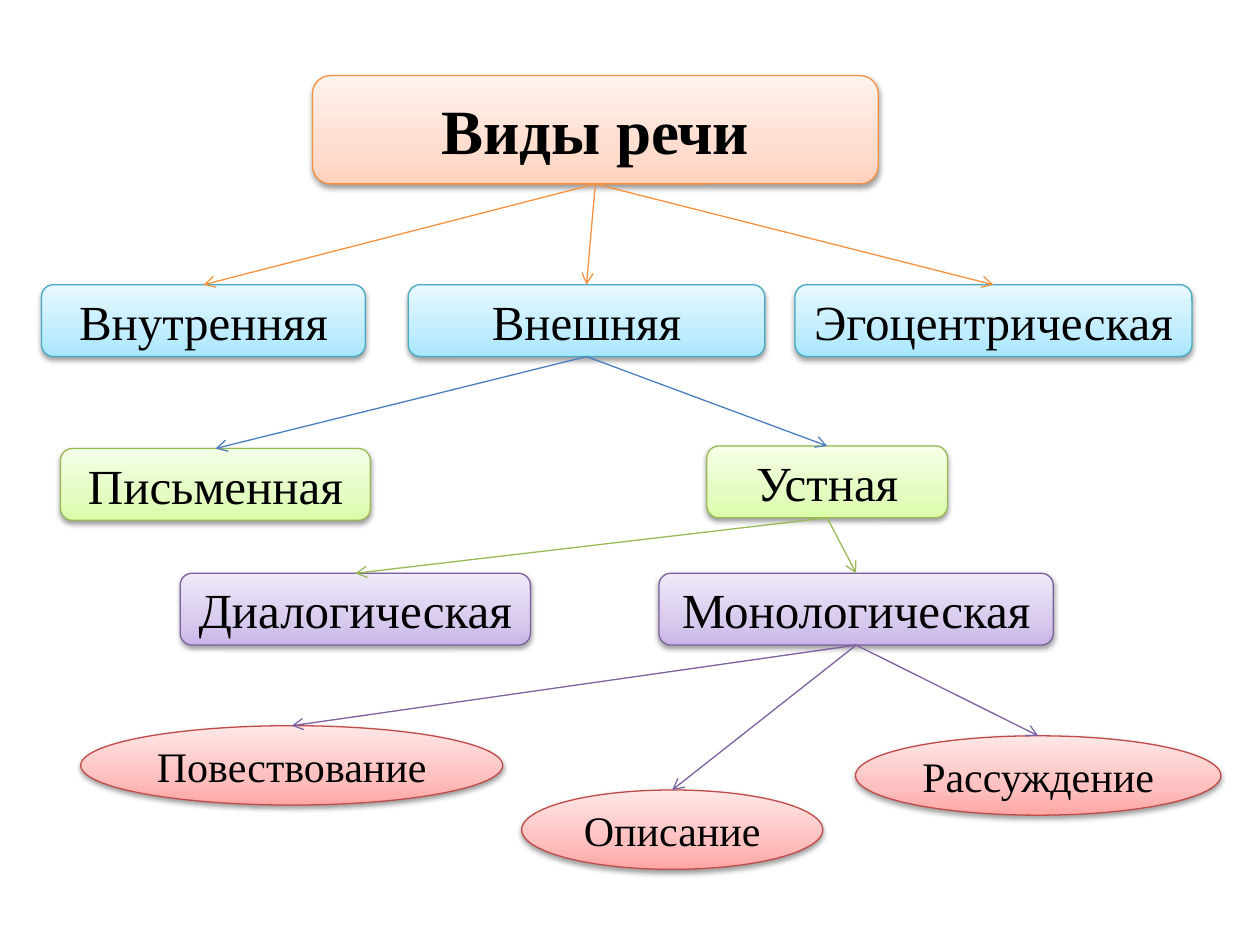
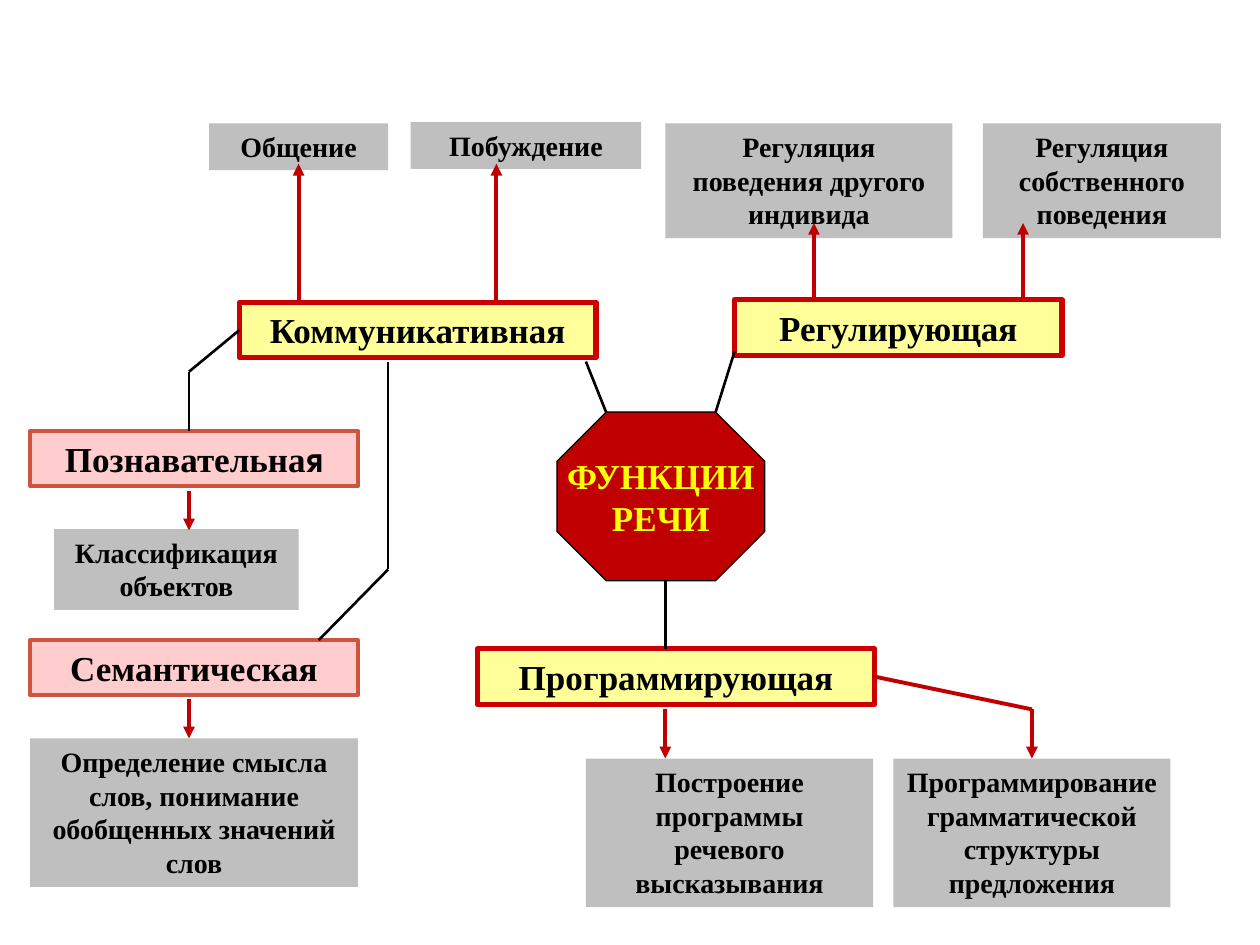
import copy

import pptx
import pptx.dml.color
import pptx.enum.shapes
import pptx.enum.text
import pptx.oxml
import pptx.oxml.ns
import pptx.util
from lxml import etree

Inches = pptx.util.Inches
Pt = pptx.util.Pt
qn = pptx.oxml.ns.qn
RGBColor = pptx.dml.color.RGBColor
Shape = pptx.enum.shapes.MSO_SHAPE
Anchor = pptx.enum.text.MSO_ANCHOR
AutoSize = pptx.enum.text.MSO_AUTO_SIZE

# Colours
BLACK = RGBColor(0x00, 0x00, 0x00)
YELLOW = RGBColor(0xFF, 0xFF, 0x00)
PALE_YELLOW = RGBColor(0xFF, 0xFF, 0x99)
PINK = RGBColor(0xFF, 0xCD, 0xCD)
GREY = RGBColor(0xBF, 0xBF, 0xBF)
DARK_RED = RGBColor(0xC0, 0x00, 0x00)
RED = RGBColor(0xCC, 0x00, 0x00)
BRICK = RGBColor(0xCF, 0x54, 0x3F)
ORANGE_LINE = RGBColor(0xF6, 0x92, 0x40)
AQUA_LINE = RGBColor(0x46, 0xAA, 0xC5)
BLUE_LINE = RGBColor(0x4B, 0x7E, 0xBC)
GREEN_LINE = RGBColor(0x98, 0xB9, 0x55)
PURPLE_LINE = RGBColor(0x7D, 0x60, 0xA0)
ROSE_LINE = RGBColor(0xBF, 0x4C, 0x48)

# Gradients, from the bottom up
ORANGE = (RGBColor(0xFF, 0xD2, 0xBD), RGBColor(0xFF, 0xDE, 0xD0), RGBColor(0xFF, 0xF2, 0xED))
AQUA = (RGBColor(0xA7, 0xE6, 0xFF), RGBColor(0xC1, 0xED, 0xFF), RGBColor(0xE7, 0xF8, 0xFF))
GREEN = (RGBColor(0xDA, 0xFD, 0xA7), RGBColor(0xE4, 0xFC, 0xC2), RGBColor(0xF5, 0xFF, 0xE7))
PURPLE = (RGBColor(0xC9, 0xB5, 0xE8), RGBColor(0xD8, 0xCB, 0xEE), RGBColor(0xF0, 0xEA, 0xF9))
ROSE = (RGBColor(0xFF, 0xA6, 0xA5), RGBColor(0xFF, 0xC0, 0xBF), RGBColor(0xFF, 0xE7, 0xE7))
STOP_POSITIONS = (0, 0.35, 1)

# Kinds of node in the tree of speech types
ROOT = {"fill": ORANGE, "line": ORANGE_LINE, "font": {"size": Pt(36), "bold": True}}
FORM = {"fill": AQUA, "line": AQUA_LINE, "font": {"size": Pt(28)}}
CHANNEL = {"fill": GREEN, "line": GREEN_LINE, "font": {"size": Pt(28)}}
MANNER = {"fill": PURPLE, "line": PURPLE_LINE, "font": {"size": Pt(28)}}
GENRE = {"fill": ROSE, "line": ROSE_LINE, "font": {"size": Pt(24)}, "outline": Shape.OVAL}

# Kinds of box in the map of speech functions
FUNCTION_FONT = {"size": Pt(20), "bold": True}
MAIN = {"fill": PALE_YELLOW, "line": RED, "width": 3, "font": FUNCTION_FONT}
SECONDARY = {"fill": PINK, "line": BRICK, "width": 2.25, "font": FUNCTION_FONT}
DETAIL = {"fill": GREY, "line": None, "font": {"size": Pt(16), "bold": True}}
CENTRE = {"fill": DARK_RED, "line": BLACK, "outline": Shape.OCTAGON,
          "font": {**FUNCTION_FONT, "color": YELLOW}}

BOTTOM, TOP, LEFT, RIGHT = 2, 0, 1, 3


class Diagram:
    """Holds the style and the current slide."""

    font = "Times New Roman"
    accent_font = "TeX Gyre Adventor"

    def __init__(self):
        self.deck = pptx.Presentation()
        self.deck.slide_width = Inches(10)
        self.deck.slide_height = Inches(7.5)
        self.slide = None

    def new_slide(self):
        self.slide = self.deck.slides.add_slide(self.deck.slide_layouts[6])

    def label(self, frame, text, font, frame_format):
        """Centred text; a tuple of strings inside a line switches to the accent font."""
        for name, value in frame_format.items():
            setattr(frame, name, value)
        lines = text if isinstance(text, list) else [text]
        for number, line in enumerate(lines):
            paragraph = frame.add_paragraph() if number else frame.paragraphs[0]
            paragraph.alignment = pptx.enum.text.PP_ALIGN.CENTER
            parts = line if isinstance(line, tuple) else (line,)
            for part, face in zip(parts, (self.font, self.accent_font)):
                run = paragraph.add_run()
                run.text = part
                values = {"name": face, **font}
                run.font.color.rgb = values.pop("color", BLACK)
                for name, value in values.items():
                    setattr(run.font, name, value)

    def shape(self, outline, place, kind):
        shape = self.slide.shapes.add_shape(outline, *map(Inches, place))
        shape.shadow.inherit = False
        if kind["line"] is None:
            shape.line.fill.background()
        else:
            shape.line.color.rgb = kind["line"]
            shape.line.width = Pt(kind.get("width", 0.75))
        return shape

    def node(self, text, place, kind):
        """Tree node with a three-stop gradient and a soft shadow."""
        node = self.shape(kind.get("outline", Shape.ROUNDED_RECTANGLE), place, kind)
        node.fill.gradient()
        node.fill.gradient_angle = 90
        properties = node._element.spPr
        stops = properties.find(qn("a:gradFill")).find(qn("a:gsLst"))
        stops.insert(1, copy.deepcopy(stops[0]))
        for stop, position, color in zip(node.fill.gradient_stops, STOP_POSITIONS, kind["fill"]):
            stop.position = position
            stop.color.rgb = color
        shadow = etree.SubElement(
            properties.find(qn("a:effectLst")), qn("a:outerShdw"), blurRad=str(Pt(3.1)),
            dist=str(Pt(1.6)), dir="5400000", rotWithShape="0")
        shade = etree.SubElement(shadow, qn("a:srgbClr"), val="000000")
        etree.SubElement(shade, qn("a:alpha"), val="38000")
        self.label(node.text_frame, text, kind["font"],
                   {"word_wrap": True, "vertical_anchor": Anchor.MIDDLE})
        return node

    def box(self, text, place, kind):
        """Flat box that grows with its text."""
        box = self.shape(Shape.RECTANGLE, place, kind)
        box.fill.solid()
        box.fill.fore_color.rgb = kind["fill"]
        self.label(box.text_frame, text, kind["font"],
                   {"word_wrap": True, "vertical_anchor": Anchor.TOP,
                    "auto_size": AutoSize.SHAPE_TO_FIT_TEXT})
        return box

    def hub(self, text, place, kind):
        hub = self.shape(kind["outline"], place, kind)
        hub.fill.solid()
        hub.fill.fore_color.rgb = kind["fill"]
        self.label(hub.text_frame, text, kind["font"],
                   {"word_wrap": False, "vertical_anchor": Anchor.MIDDLE})

    def link(self, start, end, color, width, head=None, begin=None, finish=None):
        """Straight line; begin and finish are (shape, side) pairs to join."""
        link = self.slide.shapes.add_connector(
            pptx.enum.shapes.MSO_CONNECTOR.STRAIGHT, *map(Inches, (*start, *end)))
        link.line.color.rgb = color
        link.line.width = Pt(width)
        properties = link._element.spPr
        if head:
            etree.SubElement(properties.find(qn("a:ln")), qn("a:tailEnd"), type=head)
        etree.SubElement(properties, qn("a:effectLst"))
        if begin:
            link.begin_connect(*begin)
        if finish:
            link.end_connect(*finish)

    def branches(self, parent, children, color):
        for child in children:
            self.link((0, 0), (0, 0), color, 0.75, "arrow", (parent, BOTTOM), (child, TOP))

    def arrow(self, start, end, **joins):
        self.link(start, end, DARK_RED, 2.25, "triangle", **joins)

    def spoke(self, start, end, **joins):
        self.link(start, end, BLACK, 1.5, **joins)


def speech_types(diagram):
    diagram.new_slide()
    node_height, genre_height = 0.57, 0.63

    # Nodes, level by level
    speech = diagram.node("Виды речи", (2.48, 0.6, 4.49, 0.86), ROOT)

    def level(kind, height, entries):
        return [diagram.node(text, (left, top, width, height), kind)
                for text, left, top, width in entries]

    forms = level(FORM, node_height, [
        ("Внутренняя", 0.33, 2.26, 2.57),
        ("Внешняя", 3.24, 2.26, 2.83),
        ("Эгоцентрическая", 6.31, 2.26, 3.15)])
    channels = level(CHANNEL, node_height, [
        ("Письменная", 0.48, 3.56, 2.46),
        ("Устная", 5.61, 3.54, 1.91)])
    manners = level(MANNER, node_height, [
        ("Диалогическая", 1.43, 4.55, 2.78),
        ("Монологическая", 5.23, 4.55, 3.13)])
    genres = level(GENRE, genre_height, [
        ("Повествование", 0.64, 5.76, 3.35),
        ("Описание", 4.14, 6.27, 2.39),
        ("Рассуждение", 6.79, 5.84, 2.9)])

    # Arrows from each parent to its children
    diagram.branches(speech, forms, ORANGE_LINE)
    diagram.branches(forms[1], channels, BLUE_LINE)
    diagram.branches(channels[1], manners, GREEN_LINE)
    diagram.branches(manners[1], genres, PURPLE_LINE)


def speech_functions(diagram):
    diagram.new_slide()
    function_height = 0.44

    # Centre and functions
    diagram.hub(["ФУНКЦИИ", "РЕЧИ"], (4.42, 3.27, 1.65, 1.34), CENTRE)
    communicative = diagram.box("Коммуникативная", (1.9, 2.4, 2.83, function_height), MAIN)
    diagram.box("Регулирующая", (5.83, 2.38, 2.6, function_height), MAIN)
    programming = diagram.box("Программирующая", (3.79, 5.15, 3.15, function_height), MAIN)
    diagram.box(("Познавательна", "я"), (0.24, 3.42, 2.6, function_height), SECONDARY)
    diagram.box("Семантическая", (0.24, 5.08, 2.6, function_height), SECONDARY)

    # What each function does
    for text, place in [
            ("Общение", (1.66, 0.98, 1.42, 0.37)),
            ("Побуждение", (3.26, 0.97, 1.83, 0.37)),
            ("Регуляция поведения другого индивида", (5.28, 0.98, 2.28, 0.91)),
            ("Регуляция собственного поведения", (7.8, 0.98, 1.89, 0.91)),
            ("Классификация объектов", (0.43, 4.2, 1.94, 0.64)),
            ("Определение смысла слов, понимание обобщенных значений слов",
             (0.24, 5.86, 2.6, 1.18)),
            ("Построение программы речевого высказывания", (4.65, 6.02, 2.28, 1.18))]:
        diagram.box(text, place, DETAIL)
    grammar = diagram.box("Программирование грамматической структуры предложения",
                          (7.09, 6.02, 2.2, 1.18), DETAIL)

    # Upright arrows to the details
    for x, start, end in [(2.37, 2.4, 1.3), (3.94, 2.4, 1.3), (6.46, 2.4, 1.77),
                          (8.12, 2.4, 1.77), (1.5, 3.9, 4.21), (1.5, 5.55, 5.86),
                          (5.28, 5.63, 6.02)]:
        diagram.arrow((x, start), (x, end))

    # Bent arrow to the grammar box
    bend = (8.19, 5.63)
    diagram.link(bend, (6.94, 5.37), DARK_RED, 2.25, finish=(programming, RIGHT))
    diagram.arrow(bend, (8.19, 6.02), finish=(grammar, TOP))

    # Lines between the centre and the functions
    for start, end in [((4.65, 2.87), (4.81, 3.27)), ((5.68, 3.27), (5.83, 2.79)),
                       ((5.28, 4.6), (5.28, 5.15)), ((1.5, 2.95), (1.5, 3.42)),
                       ((3.08, 2.87), (3.08, 4.52)), ((3.08, 4.52), (2.53, 5.08))]:
        diagram.spoke(start, end)
    diagram.spoke((1.5, 2.95), (1.9, 2.62), finish=(communicative, LEFT))


def main():
    diagram = Diagram()
    speech_types(diagram)
    speech_functions(diagram)
    diagram.deck.save("out.pptx")


if __name__ == "__main__":
    main()
